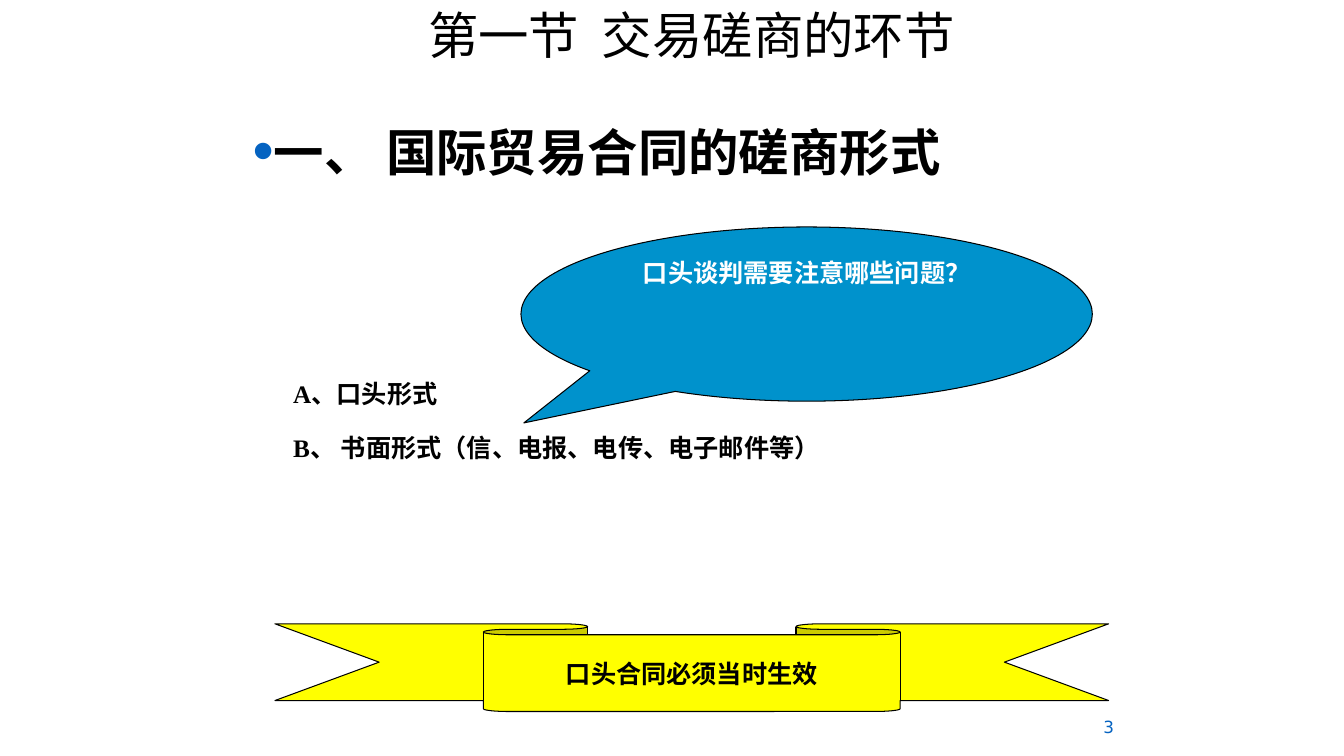
from dataclasses import dataclass

from lxml import etree
from pptx import Presentation
from pptx.dml.color import RGBColor
from pptx.enum import shapes, text
from pptx.oxml import ns
from pptx.util import Cm, Pt


@dataclass(frozen=True)
class Theme:
    ink: str = "000000"
    paper: str = "FFFFFF"
    accent: str = "0563C1"
    callout: str = "0092CC"
    ribbon: str = "FFFF00"
    heading: int = 36
    body: int = 18
    number: int = 12
    outline: float = 0.75
    serif: str = "Times New Roman"
    display: str = "Karla"
    chinese: str = "Noto Sans CJK SC"
    digits: str = "DejaVu Sans"


class SlideBuilder:
    def __init__(self, deck, theme):
        self.theme = theme
        self.page = deck.slides.add_slide(deck.slide_layouts[6])
        self.page.background.fill.solid()
        self.page.background.fill.fore_color.rgb = RGBColor.from_string(theme.paper)

    def span(self, para, words, font, size, color, bold=False):
        span = para.add_run()
        span.text = words
        span.font.name = font
        span.font.size = Pt(size)
        span.font.bold = bold
        span.font.color.rgb = RGBColor.from_string(color)
        east_asian = etree.SubElement(span.font._element, ns.qn("a:ea"))
        east_asian.set("typeface", self.theme.chinese)

    def textbox(self, place, lines, font, size, color, bold=False,
                align=text.PP_ALIGN.LEFT, anchor=text.MSO_ANCHOR.TOP, gap=0):
        box = self.page.shapes.add_textbox(*map(Cm, place))
        frame = box.text_frame
        frame.word_wrap = True
        frame.vertical_anchor = anchor
        for index, words in enumerate(lines):
            para = frame.add_paragraph() if index else frame.paragraphs[0]
            para.alignment = align
            para.space_after = Pt(gap)
            self.span(para, words, font, size, color, bold)
        return frame

    def bullet(self, para, symbol, color, percent, indent):
        properties = para._p.get_or_add_pPr()
        properties.set("marL", str(Cm(indent)))
        properties.set("indent", str(-Cm(indent)))
        tint = etree.SubElement(properties, ns.qn("a:buClr"))
        etree.SubElement(tint, ns.qn("a:srgbClr")).set("val", color)
        etree.SubElement(properties, ns.qn("a:buSzPct")).set("val", str(percent * 1000))
        etree.SubElement(properties, ns.qn("a:buFont")).set("typeface", "Arial")
        etree.SubElement(properties, ns.qn("a:buChar")).set("char", symbol)

    def shape(self, kind, place, adjustments, fill, words, color, anchor, wrap):
        theme = self.theme
        shape = self.page.shapes.add_shape(kind, *map(Cm, place))
        for index, value in enumerate(adjustments):
            shape.adjustments[index] = value
        shape.shadow.inherit = False
        shape.fill.solid()
        shape.fill.fore_color.rgb = RGBColor.from_string(fill)
        shape.line.color.rgb = RGBColor.from_string(theme.ink)
        shape.line.width = Pt(theme.outline)
        frame = shape.text_frame
        frame.word_wrap = wrap
        frame.vertical_anchor = anchor
        para = frame.paragraphs[0]
        para.alignment = text.PP_ALIGN.CENTER
        self.span(para, words, theme.serif, theme.body, color, bold=True)


def main():
    deck = Presentation()
    deck.slide_width, deck.slide_height = Cm(33.87), Cm(19.05)
    theme = Theme()
    builder = SlideBuilder(deck, theme)
    center, middle = text.PP_ALIGN.CENTER, text.MSO_ANCHOR.MIDDLE

    builder.textbox((26.34, 17.93, 3.2, 1.12), ["3"], theme.digits, theme.number,
                    theme.accent, align=center)

    heading = builder.textbox((6.12, 2.92, 21.59, 3.61), ["一、 国际贸易合同的磋商形式"],
                              theme.display, theme.heading, theme.ink, bold=True)
    builder.bullet(heading.paragraphs[0], "•", theme.accent, 120, 0.5)

    forms = builder.textbox((7.14, 8.74, 19.25, 4.88),
                            ["A、口头形式", "B、 书面形式（信、电报、电传、电子邮件等）"],
                            theme.serif, theme.body, theme.ink, bold=True, gap=17)
    forms.margin_top = Cm(0.8)

    title = builder.textbox((6.53, 0.71, 21.79, 1.7), ["第一节  交易磋商的环节"],
                            theme.chinese, theme.heading, theme.ink,
                            align=center, anchor=middle)
    title.margin_bottom = Cm(1.5)

    builder.shape(shapes.MSO_SHAPE.OVAL_CALLOUT, (13.13, 5.72, 14.4, 4.39),
                  (-0.495, 0.625), theme.callout, "口头谈判需要注意哪些问题？",
                  theme.paper, text.MSO_ANCHOR.TOP, True)
    builder.shape(shapes.MSO_SHAPE.DOWN_RIBBON, (6.93, 15.72, 21.01, 2.21),
                  (0.125, 0.5), theme.ribbon, "口头合同必须当时生效",
                  theme.ink, middle, False)

    deck.save("out.pptx")


if __name__ == "__main__":
    main()
